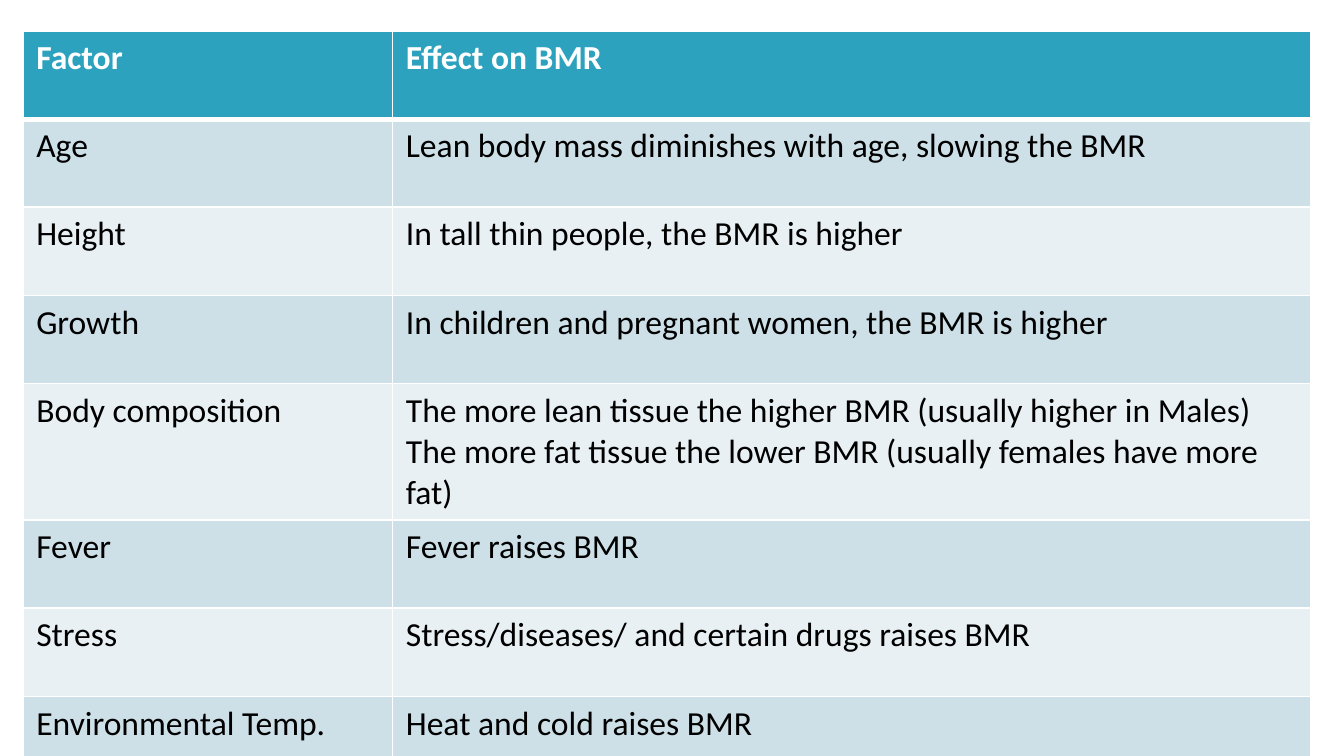
from lxml import etree
from pptx import Presentation
from pptx import util as u
from pptx.dml.color import RGBColor
from pptx.oxml.ns import qn

# Content: header first, then one factor per row
ROWS = [
    ("Factor", "Effect on BMR"),
    ("Age", "Lean body mass diminishes with age, slowing the BMR"),
    ("Height", "In tall thin people, the BMR is higher"),
    ("Growth", "In children and pregnant women, the BMR is higher"),
    ("Body composition",
     "The more lean tissue the higher BMR (usually higher in Males)\v"
     "The more fat tissue the lower BMR (usually females have more fat)"),
    ("Fever", "Fever raises BMR"),
    ("Stress", "Stress/diseases/ and certain drugs raises BMR"),
    ("Environmental Temp.", "Heat and cold raises BMR"),
]
COLORS = {"header": "2DA2BF", "odd": "CDE0E8", "even": "E8F0F4",
          "white": "FFFFFF", "black": "000000"}
WIDTH = 10
HEIGHT = WIDTH * 9 / 16
LEFT, TOP = 0.17, 0.23
COLUMNS = (2.75, 6.83)
ROW_HEIGHT = 5.25 / len(ROWS)


def set_borders(cell, widths):
    props = cell._tc.get_or_add_tcPr()
    for side, width in widths.items():
        line = etree.SubElement(props, qn(f"a:ln{side}"), w=str(u.Pt(width)))
        fill = etree.SubElement(line, qn("a:solidFill"))
        etree.SubElement(fill, qn("a:srgbClr"), val=COLORS["white"])


def fill_cell(cell, words, row):
    header = row == 0
    set_borders(cell, {"L": 1, "R": 1, "T": 3 if row == 1 else 1,
                       "B": 3 if header else 1})
    cell.fill.solid()
    shade = "header" if header else ("even", "odd")[row % 2]
    cell.fill.fore_color.rgb = RGBColor.from_string(COLORS[shade])
    cell.text_frame.text = words
    para = cell.text_frame.paragraphs[0]
    for font in [para.font] + [span.font for span in para.runs]:
        font.name, font.size, font.bold = "Calibri", u.Pt(18), header
        font.color.rgb = RGBColor.from_string(
            COLORS["white" if header else "black"])


def main():
    deck = Presentation()
    deck.slide_width, deck.slide_height = u.Inches(WIDTH), u.Inches(HEIGHT)
    page = deck.slides.add_slide(deck.slide_layouts[6])

    # Table of factors
    table = page.shapes.add_table(
        len(ROWS), len(COLUMNS), u.Inches(LEFT), u.Inches(TOP),
        u.Inches(sum(COLUMNS)), u.Inches(ROW_HEIGHT * len(ROWS))).table
    for column, width in zip(table.columns, COLUMNS):
        column.width = u.Inches(width)
    for row, entries in enumerate(ROWS):
        table.rows[row].height = u.Inches(ROW_HEIGHT)
        for column, words in enumerate(entries):
            fill_cell(table.cell(row, column), words, row)

    deck.save("out.pptx")


if __name__ == "__main__":
    main()
